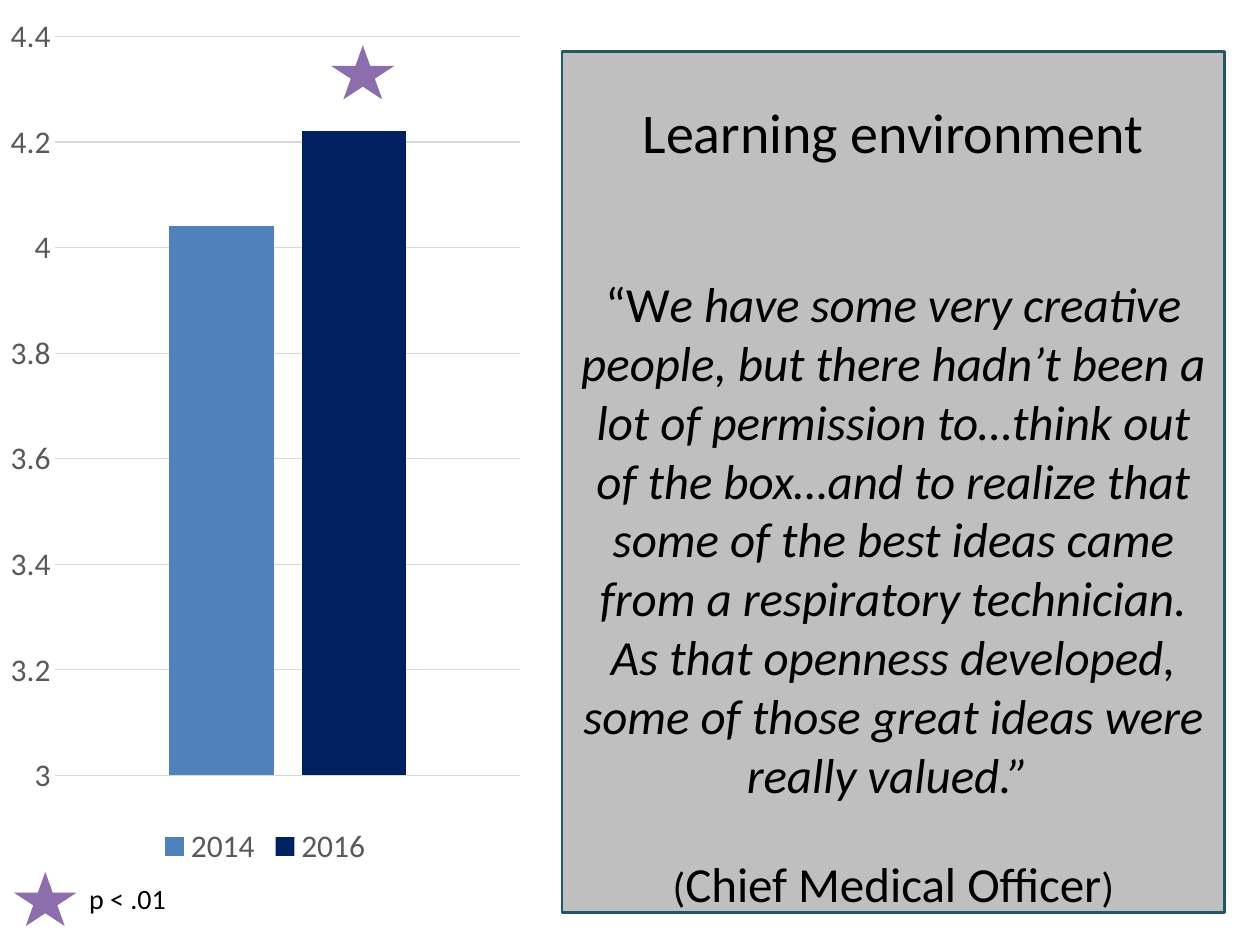
from dataclasses import dataclass

from pptx import Presentation
from pptx.chart.data import CategoryChartData
from pptx.dml.color import RGBColor
from pptx.enum.chart import XL_CHART_TYPE as Chart, XL_LEGEND_POSITION as Legend, XL_TICK_MARK as Tick
from pptx.enum.shapes import MSO_SHAPE as Shape
from pptx.enum.text import MSO_ANCHOR as Anchor, PP_ALIGN as Align
from pptx.util import Emu, Inches, Pt

FONT = "Calibri"
BLACK = RGBColor(0x00, 0x00, 0x00)
GRAY = RGBColor(0x59, 0x59, 0x59)
GRID = RGBColor(0xD9, 0xD9, 0xD9)
PANEL = RGBColor(0xBF, 0xBF, 0xBF)
TEAL = RGBColor(0x21, 0x59, 0x68)
PURPLE = RGBColor(0x8D, 0x6E, 0xAC)
BLUE = RGBColor(0x4F, 0x81, 0xBD)
NAVY = RGBColor(0x00, 0x20, 0x60)


@dataclass(frozen=True)
class Area:
    """Left, top, width and height in percent of the slide's size."""
    x: float
    y: float
    w: float
    h: float

    def place(self, prs) -> tuple:
        sw, sh = prs.slide_width / 100, prs.slide_height / 100
        return tuple(Emu(round(v)) for v in (self.x * sw, self.y * sh, self.w * sw, self.h * sh))


@dataclass(frozen=True)
class Piece:
    text: str
    size: int
    italic: bool = False


@dataclass(frozen=True)
class Series:
    name: str
    value: float
    color: RGBColor


@dataclass(frozen=True)
class Para:
    before: int
    pieces: tuple[Piece, ...]


SERIES = (Series("2014", 4.04, BLUE), Series("2016", 4.22, NAVY))
STARS = (Area(1.1, 92.27, 5, 5.73), Area(26.3, 4.8, 5, 5.73))
QUOTE = (
    "e have some very creative people, but there hadn’t been a lot of permission "
    "to…think out of the box…and to realize that some of the best ideas came from "
    "a respiratory technician. As that openness developed, some of those great "
    "ideas were really valued.” "
)
PANEL_TEXT = (
    Para(0, (Piece("Learning environment", 32),)),
    Para(62, (Piece("“W", 28), Piece(QUOTE, 28, True))),
    Para(29, (Piece("(", 24), Piece("Chief Medical Officer", 28), Piece(")", 24))),
)


def set_font(font, size: int, color: RGBColor, italic: bool = False) -> None:
    font.name = FONT
    font.size = Pt(size)
    font.italic = italic
    font.color.rgb = color


def add_filled(s, kind, place: tuple, fill: RGBColor):
    sp = s.shapes.add_shape(kind, *place)
    sp.shadow.inherit = False
    sp.fill.solid()
    sp.fill.fore_color.rgb = fill
    sp.line.fill.background()
    return sp


def add_panel(s, place: tuple) -> None:
    sp = add_filled(s, Shape.RECTANGLE, place, PANEL)
    sp.line.color.rgb = TEAL
    sp.line.width = Pt(1.5)
    tf = sp.text_frame
    tf.word_wrap = True
    tf.vertical_anchor = Anchor.MIDDLE
    tf.margin_top, tf.margin_bottom = Inches(0.37), 0
    for i, para in enumerate(PANEL_TEXT):
        p = tf.add_paragraph() if i else tf.paragraphs[0]
        p.alignment = Align.CENTER
        p.space_before = Pt(para.before)
        for piece in para.pieces:
            r = p.add_run()
            r.text = piece.text
            set_font(r.font, piece.size, BLACK, piece.italic)


def add_score_chart(s, place: tuple) -> None:
    data = CategoryChartData()
    data.categories = ["1"]
    for item in SERIES:
        data.add_series(item.name, [item.value])
    chart = s.shapes.add_chart(Chart.COLUMN_CLUSTERED, *place, data).chart
    set_font(chart.font, 10, BLACK)
    chart.has_title = False
    chart.has_legend = True
    chart.legend.position = Legend.BOTTOM
    chart.legend.include_in_layout = False
    set_font(chart.legend.font, 18, GRAY)

    # Columns
    plot = chart.plots[0]
    plot.gap_width, plot.overlap = 219, -27
    plot.vary_by_categories = False
    for series, item in zip(plot.series, SERIES):
        series.format.fill.solid()
        series.format.fill.fore_color.rgb = item.color

    # Axes
    chart.category_axis.visible = False
    axis = chart.value_axis
    axis.minimum_scale, axis.maximum_scale, axis.major_unit = 3, 4.4, 0.2
    axis.major_tick_mark = axis.minor_tick_mark = Tick.NONE
    axis.tick_labels.number_format = "General"
    axis.tick_labels.number_format_is_linked = False
    set_font(axis.tick_labels.font, 18, GRAY)
    axis.format.line.fill.background()
    axis.major_gridlines.format.line.color.rgb = GRID
    axis.major_gridlines.format.line.width = Pt(0.75)


def add_label(s, place: tuple, text: str) -> None:
    tf = s.shapes.add_textbox(*place).text_frame
    tf.word_wrap = False
    tf.text = text
    set_font(tf.paragraphs[0].runs[0].font, 16, BLACK)


def main() -> None:
    prs = Presentation()
    prs.slide_width, prs.slide_height = Inches(10), Inches(7.5)
    s = prs.slides.add_slide(prs.slide_layouts[6])

    # Quotation panel and chart
    add_panel(s, Area(44.6, 5.47, 52.6, 91.07).place(prs))
    add_score_chart(s, Area(0, 0, 42.1, 92.27).place(prs))

    # Significance stars and their key
    for area in STARS:
        add_filled(s, Shape.STAR_5_POINT, area.place(prs), PURPLE)
    add_label(s, Area(6.1, 92.67, 11.8, 4.93).place(prs), "p < .01")

    prs.save("out.pptx")


if __name__ == "__main__":
    main()
